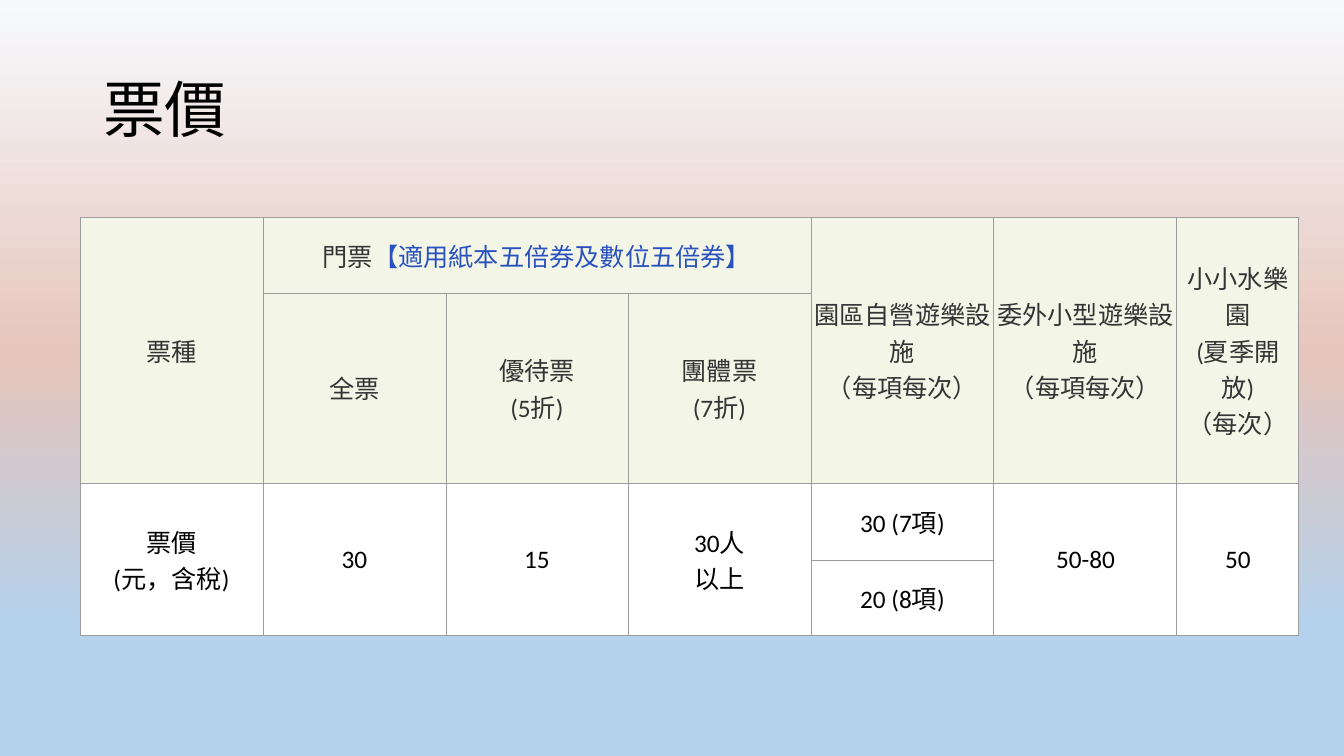
from copy import deepcopy
from dataclasses import dataclass

from lxml.etree import SubElement
from pptx import Presentation
from pptx.dml.color import RGBColor
from pptx.enum.text import MSO_ANCHOR, PP_ALIGN
from pptx.oxml.ns import qn
from pptx.util import Pt

EMU_PER_PX = 914400 / 100.8


def px(length):
    return round(length * EMU_PER_PX)


@dataclass(frozen=True)
class Theme:
    font: str = "Calibri"
    title_size: int = 44
    table_size: int = 18
    border_width: float = 0.75
    sky: tuple = ((0, "F7FAFD"), (47, "E6C5BC"), (83, "B5D2EC"))
    ink: str = "000000"
    header_ink: str = "343434"
    voucher_ink: str = "2A52BE"
    header_fill: str = "F3F6E7"
    price_fill: str = "FFFFFF"
    border: str = "9C9C9C"


class SlideBuilder:
    """Draws styled elements on one title-only slide."""

    def __init__(self, theme):
        self.theme = theme
        self.deck = Presentation()
        self.deck.slide_width, self.deck.slide_height = px(1344), px(756)
        self.slide = self.deck.slides.add_slide(self.deck.slide_layouts[5])

    def background(self):
        fill = self.slide.background.fill
        fill.gradient()
        fill.gradient_angle = 270
        stop_list = next(self.slide.element.iter(qn("a:gsLst")))
        stop_list.append(deepcopy(stop_list[0]))
        for stop, (position, color) in zip(fill.gradient_stops, self.theme.sky):
            stop.color.rgb = RGBColor.from_string(color)
            stop.position = position / 100

    def style(self, paragraph, size, color, align):
        paragraph.alignment = align
        paragraph.font.size = Pt(size)
        paragraph.font.name = self.theme.font
        paragraph.font.color.rgb = RGBColor.from_string(color)

    def title(self, wording, left, top, width, height):
        heading = self.slide.shapes.title
        heading.left, heading.top = px(left), px(top)
        heading.width, heading.height = px(width), px(height)
        heading.text_frame.vertical_anchor = MSO_ANCHOR.MIDDLE
        paragraph = heading.text_frame.paragraphs[0]
        paragraph.text = wording
        paragraph.line_spacing = 0.9
        self.style(paragraph, self.theme.title_size, self.theme.ink, PP_ALIGN.LEFT)

    def table(self, left, top, widths, heights):
        frame = self.slide.shapes.add_table(
            len(heights), len(widths), px(left), px(top), px(sum(widths)), px(sum(heights)))
        grid = frame.table
        grid.first_row = grid.horz_banding = False
        for column, width in zip(grid.columns, widths):
            column.width = px(width)
        for row, height in zip(grid.rows, heights):
            row.height = px(height)
        return grid

    def cell(self, cell, wording, fill, color):
        cell.vertical_anchor = MSO_ANCHOR.MIDDLE
        cell.margin_left = cell.margin_right = cell.margin_top = cell.margin_bottom = px(3)
        paragraph = cell.text_frame.paragraphs[0]
        paragraph.text = wording
        self.style(paragraph, self.theme.table_size, color, PP_ALIGN.CENTER)
        self.borders(cell)
        cell.fill.solid()
        cell.fill.fore_color.rgb = RGBColor.from_string(fill)

    def borders(self, cell):
        properties = cell._tc.get_or_add_tcPr()
        for side in ("a:lnL", "a:lnR", "a:lnT", "a:lnB"):
            line = SubElement(properties, qn(side), w=str(Pt(self.theme.border_width)))
            SubElement(SubElement(line, qn("a:solidFill")), qn("a:srgbClr"), val=self.theme.border)

    def highlight(self, cell, wording, color):
        run = cell.text_frame.paragraphs[0].add_run()
        run.text = wording
        run.font.color.rgb = RGBColor.from_string(color)


HEADER_ROWS = 2
PRICES = (
    ("票種", "門票", "", "", "園區自營遊樂設施\n（每項每次）",
     "委外小型遊樂設施\n（每項每次）", "小小水樂園\n(夏季開放)\n（每次）"),
    ("", "全票", "優待票\n(5折)", "團體票\n(7折)", "", "", ""),
    ("票價\n(元，含稅)", "30", "15", "30人\n以上", "30 (7項)", "50-80", "50"),
    ("", "", "", "", "20 (8項)", "", ""),
)
TALL_CELLS = {0: (0, 4, 5, 6), 2: (0, 1, 2, 3, 5, 6)}


def main():
    theme = Theme()
    builder = SlideBuilder(theme)
    builder.background()
    builder.title("票價", 93, 40, 1159, 146)
    prices = builder.table(80, 217, (183, 183, 182, 183, 183, 183, 122), (76, 190, 77, 76))
    for row, wordings in enumerate(PRICES):
        is_header = row < HEADER_ROWS
        fill = theme.header_fill if is_header else theme.price_fill
        color = theme.header_ink if is_header else theme.ink
        for column, wording in enumerate(wordings):
            builder.cell(prices.cell(row, column), wording, fill, color)
    builder.highlight(prices.cell(0, 1), "【適用紙本五倍券及數位五倍券】", theme.voucher_ink)
    prices.cell(0, 1).merge(prices.cell(0, 3))
    for row, columns in TALL_CELLS.items():
        for column in columns:
            prices.cell(row, column).merge(prices.cell(row + 1, column))
    builder.deck.save("out.pptx")


if __name__ == "__main__":
    main()
